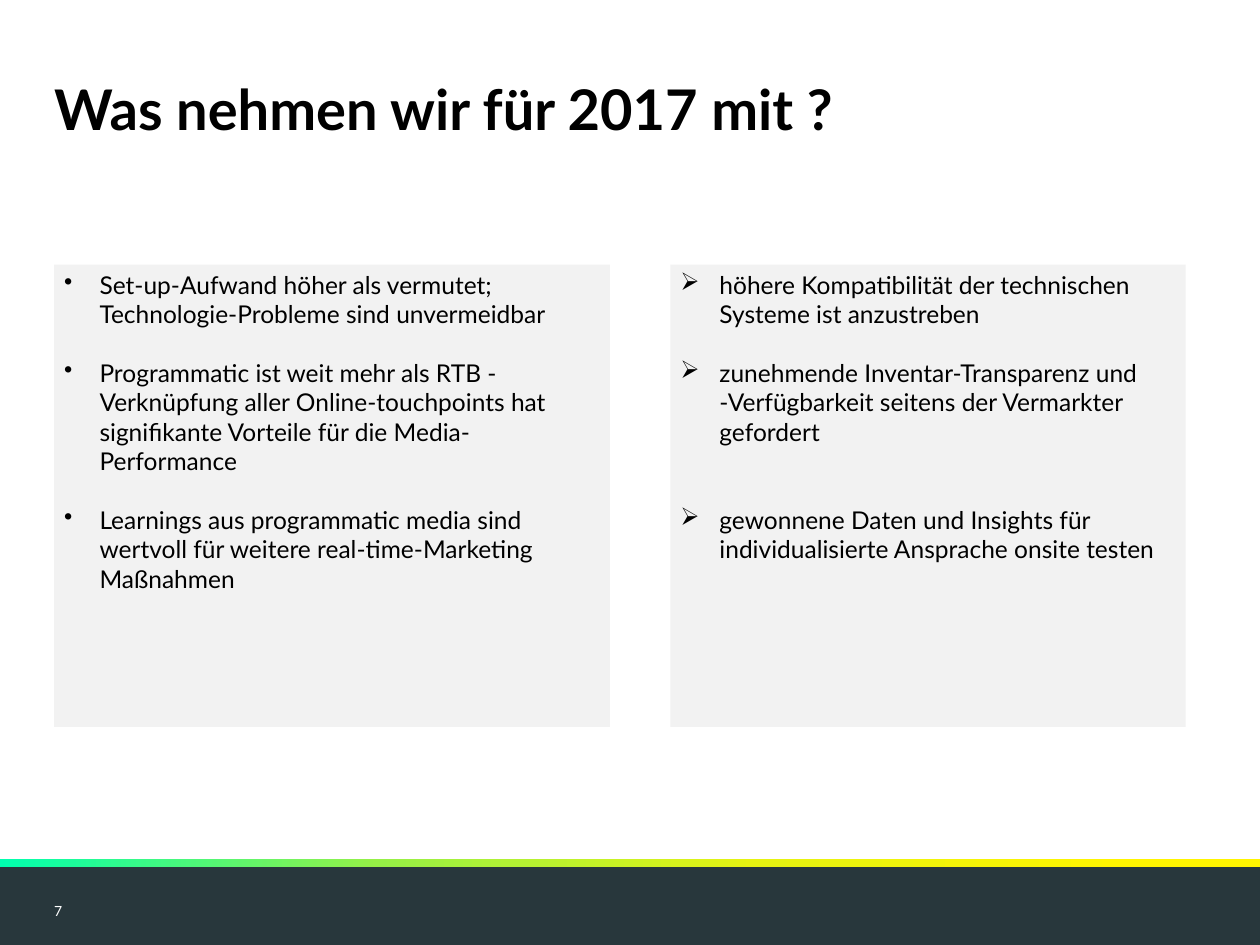
"""Build the slide that sums up the lessons for 2017 in two bulleted panels."""

from dataclasses import dataclass

import lxml.etree
import pptx
import pptx.dml.color
import pptx.enum.shapes
import pptx.enum.text
import pptx.oxml.ns
import pptx.util

RGBColor = pptx.dml.color.RGBColor
BLACK = RGBColor(0x00, 0x00, 0x00)
WHITE = RGBColor(0xFF, 0xFF, 0xFF)
PANEL_GREY = RGBColor(0xF2, 0xF2, 0xF2)
FOOTER_SLATE = RGBColor(0x28, 0x37, 0x3C)
STRIPE_STOPS = {
    0: RGBColor(0x00, 0xFF, 0xAF),
    30: RGBColor(0x96, 0xF0, 0x46),
    60: RGBColor(0xE6, 0xF3, 0x11),
    90: RGBColor(0xFF, 0xF5, 0x00),
}

FONT = "Lato"
BODY_SIZE = 14
BODY_LINE = 1.2 * BODY_SIZE
COLUMNS, ROWS = 100, 75
SLIDE_WIDTH, SLIDE_HEIGHT = pptx.util.Inches(10), pptx.util.Inches(7.5)
MARGIN = 4.3
PANEL_TOP, PANEL_HEIGHT = 21, 36.7
FOOTER_TOP = 68.6


@dataclass(frozen=True)
class Frame:
    """A place on the slide in grid columns and rows."""

    left: float
    top: float
    width: float
    height: float


@dataclass(frozen=True)
class Item:
    """A bulleted statement and the number of free lines above it."""

    text: str
    lines_before: int = 0


@dataclass(frozen=True)
class Panel:
    """A grey panel with its bullet sign, hanging indent and items."""

    frame: Frame
    bullet: str
    indent: float
    items: tuple[Item, ...]


PANELS = (
    Panel(Frame(MARGIN, PANEL_TOP, 44.1, PANEL_HEIGHT), "•", 2.8, (
        Item("Set-up-Aufwand höher als vermutet; Technologie-Probleme sind unvermeidbar"),
        Item("Programmatic ist weit mehr als RTB - Verknüpfung aller Online-touchpoints hat "
             "signifikante Vorteile für die Media-Performance", 1),
        Item("Learnings aus programmatic media sind wertvoll für weitere "
             "real-time-Marketing Maßnahmen", 1),
    )),
    Panel(Frame(53.2, PANEL_TOP, 40.9, PANEL_HEIGHT), "➢", 3.1, (
        Item("höhere Kompatibilität der technischen Systeme ist anzustreben"),
        Item("zunehmende Inventar-Transparenz und -Verfügbarkeit seitens der Vermarkter "
             "gefordert", 1),
        Item("gewonnene Daten und Insights für individualisierte Ansprache onsite testen", 2),
    )),
)


def across(columns: float) -> int:
    """Turn grid columns into a length."""
    return round(SLIDE_WIDTH * columns / COLUMNS)


def down(rows: float) -> int:
    """Turn grid rows into a length."""
    return round(SLIDE_HEIGHT * rows / ROWS)


def place(frame: Frame) -> tuple[int, int, int, int]:
    """Turn a frame into left, top, width and height."""
    return across(frame.left), down(frame.top), across(frame.width), down(frame.height)


def set_up_text(shape, insets=(0, 0, 0, 0), anchor=pptx.enum.text.MSO_ANCHOR.TOP):
    """Set wrapping, insets and anchor of a shape's text and return its text frame."""
    text_frame = shape.text_frame
    text_frame.word_wrap = True
    text_frame.auto_size = pptx.enum.text.MSO_AUTO_SIZE.NONE
    text_frame.vertical_anchor = anchor
    text_frame.margin_left, text_frame.margin_right = map(across, insets[:2])
    text_frame.margin_top, text_frame.margin_bottom = map(down, insets[2:])
    return text_frame


def write(para, text: str, *, size: float, color: RGBColor = BLACK, bold: bool = False,
          space_before: float = 0, bullet: str = "", indent: float = 0) -> None:
    """Write formatted text into a paragraph, with a hanging bullet if one is given."""
    para.alignment = pptx.enum.text.PP_ALIGN.LEFT
    para.space_before = pptx.util.Pt(space_before)
    if bullet:
        properties = para._p.get_or_add_pPr()
        properties.set("marL", str(across(indent)))
        properties.set("indent", str(-across(indent)))
        sign = lxml.etree.SubElement(properties, pptx.oxml.ns.qn("a:buChar"))
        sign.set("char", bullet)
    span = para.add_run()
    span.text = text
    span.font.name = FONT
    span.font.size = pptx.util.Pt(size)
    span.font.bold = bold
    span.font.color.rgb = color


def add_rectangle(page, frame: Frame, color: RGBColor):
    """Add a plain rectangle without line or shadow."""
    box = page.shapes.add_shape(pptx.enum.shapes.MSO_SHAPE.RECTANGLE, *place(frame))
    box.shadow.inherit = False
    box.line.fill.background()
    box.fill.solid()
    box.fill.fore_color.rgb = color
    return box


def apply_gradient(box, stops: dict[int, RGBColor]) -> None:
    """Fill a shape with a gradient running from left to right."""
    box.fill.gradient()
    box.fill.gradient_angle = 0
    qn = pptx.oxml.ns.qn
    stop_list = box._element.spPr.find(qn("a:gradFill")).find(qn("a:gsLst"))
    for old_stop in list(stop_list):
        stop_list.remove(old_stop)
    for percent, color in stops.items():
        stop = lxml.etree.SubElement(stop_list, qn("a:gs"), pos=str(percent * 1000))
        lxml.etree.SubElement(stop, qn("a:srgbClr"), val=str(color))


def add_footer(page, number: str) -> None:
    """Add the dark band, the gradient stripe and the page number."""
    add_rectangle(page, Frame(0, FOOTER_TOP, COLUMNS, ROWS - FOOTER_TOP), FOOTER_SLATE)
    stripe = add_rectangle(page, Frame(0, 68.2, COLUMNS, 0.6), WHITE)
    apply_gradient(stripe, STRIPE_STOPS)
    box = page.shapes.add_textbox(*place(Frame(MARGIN, 71.7, 11.8, 1.2)))
    text_frame = set_up_text(box, anchor=pptx.enum.text.MSO_ANCHOR.MIDDLE)
    write(text_frame.paragraphs[0], number, size=8, color=WHITE)


def add_title(page, text: str) -> None:
    """Move the title placeholder and write the title."""
    title = page.shapes.title
    title.left, title.top, title.width, title.height = place(Frame(MARGIN, 5.9, 91.3, 9.8))
    write(set_up_text(title).paragraphs[0], text, size=32, bold=True)


def add_panel(page, panel: Panel) -> None:
    """Add a grey panel with its bulleted items."""
    box = add_rectangle(page, panel.frame, PANEL_GREY)
    text_frame = set_up_text(box, insets=(0.8, 0.4, 0.4, 0.4))
    for index, item in enumerate(panel.items):
        para = text_frame.add_paragraph() if index else text_frame.paragraphs[0]
        write(para, item.text, size=BODY_SIZE, space_before=item.lines_before * BODY_LINE,
              bullet=panel.bullet, indent=panel.indent)


def main() -> None:
    """Build and save the deck."""
    deck = pptx.Presentation()
    deck.slide_width, deck.slide_height = SLIDE_WIDTH, SLIDE_HEIGHT
    page = deck.slides.add_slide(deck.slide_layouts.get_by_name("Title Only"))
    add_footer(page, "7")
    add_title(page, "Was nehmen wir für 2017 mit ?")
    for panel in PANELS:
        add_panel(page, panel)
    deck.save("out.pptx")


if __name__ == "__main__":
    main()
